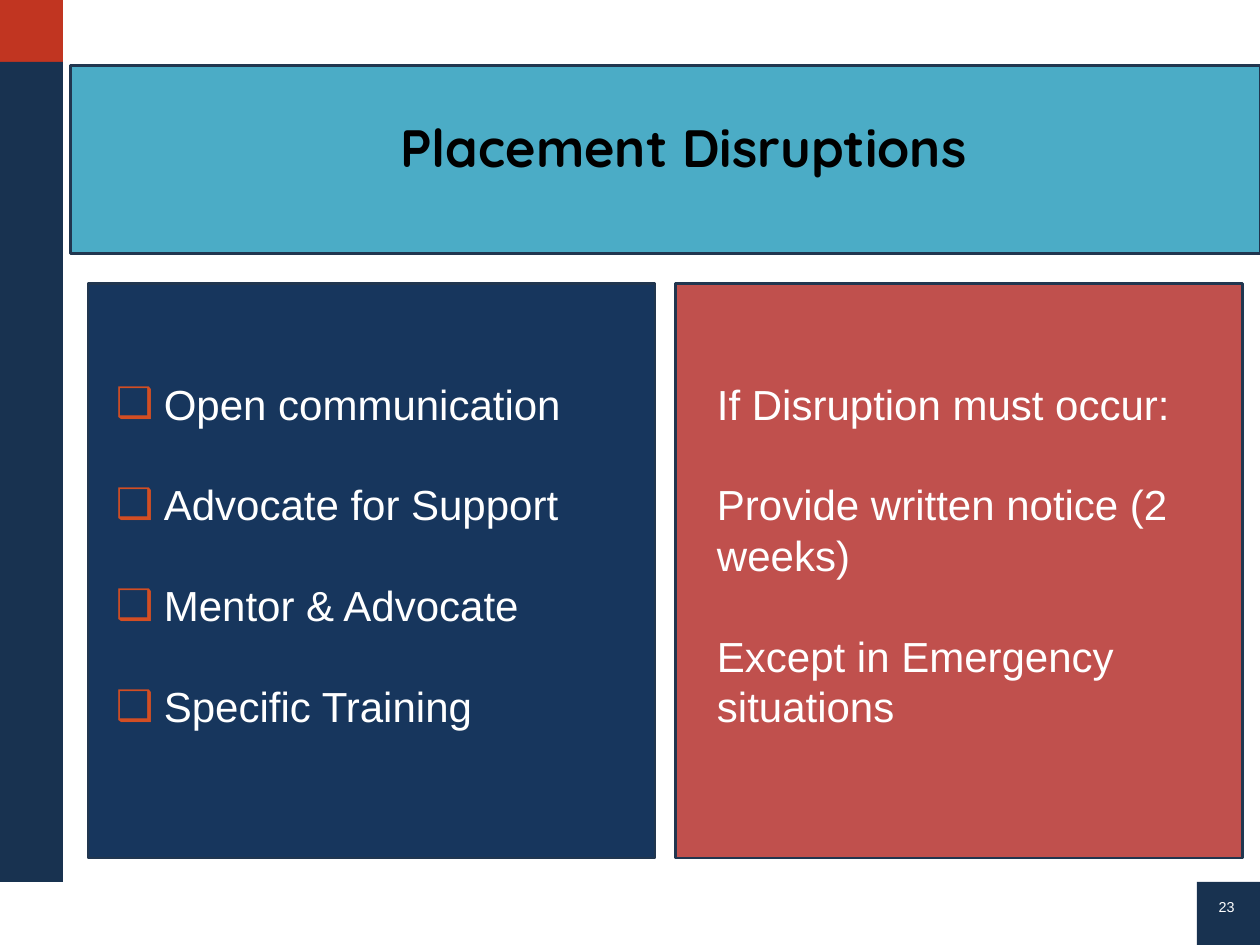
import lxml.etree
import pptx
import pptx.dml.color
import pptx.enum.shapes
import pptx.enum.text
import pptx.oxml.ns
import pptx.util

Inches = pptx.util.Inches
Pt = pptx.util.Pt
Align = pptx.enum.text.PP_ALIGN
Anchor = pptx.enum.text.MSO_ANCHOR

COLORS = {
    "navy": "183250",
    "red": "C13521",
    "outline": "21364F",
    "banner": "4BACC6",
    "support": "17365D",
    "notice": "C0504D",
    "bullet": "D34E23",
    "white": "FFFFFF",
    "black": "000000",
}


def rgb(name):
    return pptx.dml.color.RGBColor.from_string(COLORS[name])


class SlideBuilder:
    body_font = "Arial"
    title_font = "Quicksand"
    body_size = 24
    line_pitch = Pt(28.8)
    hanging_indent = Inches(0.38)

    def __init__(self, slide):
        self.slide = slide

    def block(self, left, top, width, height, fill, outlined=False):
        block = self.slide.shapes.add_shape(
            pptx.enum.shapes.MSO_SHAPE.RECTANGLE,
            Inches(left), Inches(top), Inches(width), Inches(height))
        block.shadow.inherit = False
        block.fill.solid()
        block.fill.fore_color.rgb = rgb(fill)
        if outlined:
            block.line.color.rgb = rgb("outline")
            block.line.width = Pt(1.5)
        else:
            block.line.fill.background()

    def style(self, paragraph, font, size, color, bold=False):
        for run in paragraph.runs:
            run.font.name = font
            run.font.size = Pt(size)
            run.font.bold = bold
            run.font.color.rgb = rgb(color)

    def place(self, index, left, top, width, height):
        holder = self.slide.placeholders[index]
        holder.element.getparent().append(holder.element)
        holder.left, holder.top = Inches(left), Inches(top)
        holder.width, holder.height = Inches(width), Inches(height)
        frame = holder.text_frame
        frame.word_wrap = True
        frame.auto_size = pptx.enum.text.MSO_AUTO_SIZE.NONE
        frame.vertical_anchor = Anchor.TOP
        return frame

    def title(self, text, *box):
        frame = self.place(0, *box)
        frame.text = text
        heading = frame.paragraphs[0]
        heading.alignment = Align.CENTER
        self.style(heading, self.title_font, 30, "black", bold=True)

    def bullet(self, paragraph, mark):
        properties = paragraph._p.get_or_add_pPr()
        indent = self.hanging_indent if mark else 0
        properties.set("marL", str(indent))
        properties.set("indent", str(-indent))
        qn = pptx.oxml.ns.qn
        if mark:
            color = lxml.etree.SubElement(properties, qn("a:buClr"))
            lxml.etree.SubElement(color, qn("a:srgbClr"), val=COLORS["bullet"])
            lxml.etree.SubElement(properties, qn("a:buFont"), typeface=self.body_font)
            lxml.etree.SubElement(properties, qn("a:buChar"), char=mark)
        else:
            lxml.etree.SubElement(properties, qn("a:buNone"))

    def body(self, index, lines, *box, mark=None):
        frame = self.place(index, *box)
        frame.text = "\n".join(lines)
        for position, paragraph in enumerate(frame.paragraphs):
            self.bullet(paragraph, mark)
            paragraph.line_spacing = self.line_pitch
            paragraph.space_before = self.line_pitch if position else Pt(0)
            self.style(paragraph, self.body_font, self.body_size, "white")

    def page_number(self, number, left, top, width, height):
        frame = self.slide.shapes.add_textbox(
            Inches(left), Inches(top), Inches(width), Inches(height)).text_frame
        frame.margin_left = frame.margin_right = 0
        frame.margin_top = frame.margin_bottom = 0
        frame.word_wrap = True
        frame.vertical_anchor = Anchor.MIDDLE
        frame.text = number
        frame.paragraphs[0].alignment = Align.CENTER
        self.style(frame.paragraphs[0], self.body_font, 8.2, "white")


def main():
    deck = pptx.Presentation()
    deck.slide_width, deck.slide_height = Inches(10), Inches(7.5)
    builder = SlideBuilder(deck.slides.add_slide(deck.slide_layouts[3]))

    builder.block(9.5, 7, 0.5, 0.5, "navy")
    builder.block(0, 0, 0.5, 0.5, "red")
    builder.block(0, 0.49, 0.5, 6.51, "navy")
    builder.page_number("23", 9.56, 7.06, 0.35, 0.27)

    builder.block(0.56, 0.52, 9.44, 1.49, "banner", outlined=True)
    builder.title("Placement Disruptions", 1.28, 0.86, 8.29, 1.11)

    for left, fill in ((0.7, "support"), (5.36, "notice")):
        builder.block(left, 2.25, 4.5, 4.56, fill, outlined=True)
    builder.body(1, ["Open communication", "Advocate for Support",
                     "Mentor & Advocate", "Specific Training"],
                 0.82, 2.95, 4.6, 3.33, mark="❑")
    builder.body(2, ["If Disruption must occur:",
                     "Provide written notice (2 weeks)",
                     "Except in Emergency situations"],
                 5.59, 2.95, 4.6, 2.93)

    deck.save("out.pptx")


if __name__ == "__main__":
    main()
